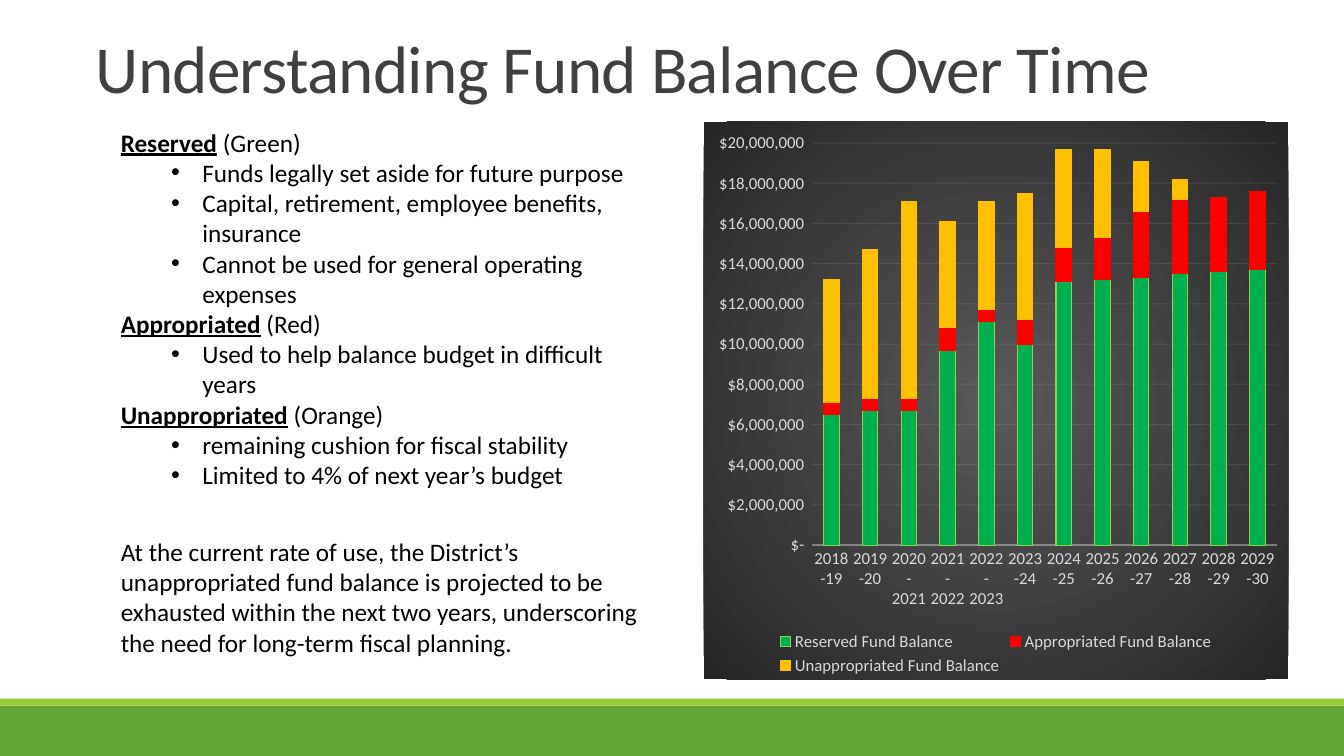
from dataclasses import dataclass
from typing import Any

from lxml import etree
from pptx import Presentation
from pptx.chart.data import CategoryChartData
from pptx.dml.color import RGBColor
from pptx.enum.chart import XL_CHART_TYPE, XL_LEGEND_POSITION, XL_TICK_MARK
from pptx.enum.shapes import MSO_SHAPE
from pptx.enum.text import MSO_ANCHOR
from pptx.oxml import parse_xml
from pptx.oxml.ns import nsdecls, qn
from pptx.util import Inches, Pt

RECTANGLE = MSO_SHAPE.RECTANGLE
STACKED = XL_CHART_TYPE.COLUMN_STACKED
LEGEND_BOTTOM = XL_LEGEND_POSITION.BOTTOM
NO_TICK = XL_TICK_MARK.NONE
TOP, BOTTOM = MSO_ANCHOR.TOP, MSO_ANCHOR.BOTTOM
DOLLARS = '_("$"* #,##0_);_("$"* \\(#,##0\\);_("$"* "-"_);_(@_)'
SLIDE_WIDTH, SLIDE_HEIGHT = Inches(13.33), Inches(7.5)


@dataclass(frozen=True)
class Theme:
    font: str = "Calibri"
    title_size: float = 48
    body_size: float = 18
    chart_size: float = 12
    title: str = "404040"
    body: str = "000000"
    band: str = "63A537"
    stripe: str = "99CB38"
    chart_text: str = "D9D9D9"
    chart_line: str = "F2F2F2"
    chart_center: str = "595959"
    chart_edge: str = "262626"


@dataclass(frozen=True)
class Area:
    """Left, top, width and height in percent of the slide."""
    left: float
    top: float
    width: float
    height: float

    def box(self) -> tuple[int, int, int, int]:
        return (int(SLIDE_WIDTH * self.left / 100), int(SLIDE_HEIGHT * self.top / 100),
                int(SLIDE_WIDTH * self.width / 100), int(SLIDE_HEIGHT * self.height / 100))


@dataclass(frozen=True)
class Band:
    area: Area
    color: str


@dataclass(frozen=True)
class Fund:
    name: str
    color_name: str
    points: tuple[str, ...]


@dataclass(frozen=True)
class Series:
    name: str
    fill: str
    line: str
    hundred_thousands: tuple[int, ...]


THEME = Theme()
BANDS = (
    Band(Area(0, 93.33, 100, 6.67), THEME.band),
    Band(Area(0, 92.4, 100, 0.93), THEME.stripe),
)
TITLE_AREA = Area(6.38, 0, 82.5, 14.8)
FUNDS_AREA = Area(8.25, 16.13, 41.1, 49.87)
OUTLOOK_AREA = Area(8.25, 70.27, 42.69, 17.47)
CHART_AREA = Area(52.36, 16.13, 43.51, 73.73)

TITLE = "Understanding Fund Balance Over Time"
OUTLOOK = ("At the current rate of use, the District’s unappropriated fund balance is projected "
           "to be exhausted within the next two years, underscoring the need for long-term "
           "fiscal planning.")
FUNDS = (
    Fund("Reserved", "Green", (
        "Funds legally set aside for future purpose",
        "Capital, retirement, employee benefits, insurance",
        "Cannot be used for general operating expenses")),
    Fund("Appropriated", "Red", ("Used to help balance budget in difficult years",)),
    Fund("Unappropriated", "Orange", (
        "remaining cushion for fiscal stability",
        "Limited to 4% of next year’s budget")),
)
YEARS = ("2018-19", "2019-20", "2020-2021", "2021-2022", "2022-2023", "2023-24",
         "2024-25", "2025-26", "2026-27", "2027-28", "2028-29", "2029-30")
SERIES = (
    Series("Reserved Fund Balance", "00B050", "92D050",
           (65, 67, 67, 97, 111, 100, 131, 132, 133, 135, 136, 137)),
    Series("Appropriated Fund Balance", "FF0000", "FF0000",
           (6, 6, 6, 11, 6, 12, 17, 21, 33, 37, 37, 39)),
    Series("Unappropriated Fund Balance", "FFC000", "FFC000",
           (61, 74, 98, 53, 54, 63, 49, 44, 25, 10, 0, 0)),
)


def apply(target: Any, values: dict[str, Any]) -> None:
    for name, value in values.items():
        setattr(target, name, value)


def style_font(font: Any, size: float, color: str) -> None:
    apply(font, {"name": THEME.font, "size": Pt(size)})
    font.color.rgb = RGBColor.from_string(color)


def style_line(line: Any, color: str, width: float) -> None:
    line.color.rgb = RGBColor.from_string(color)
    line.width = Pt(width)


def draw_band(slide: Any, band: Band) -> None:
    shape = slide.shapes.add_shape(RECTANGLE, *band.area.box())
    shape.shadow.inherit = False
    shape.fill.solid()
    shape.fill.fore_color.rgb = RGBColor.from_string(band.color)
    shape.line.fill.background()


def add_text_frame(slide: Any, area: Area, anchor: Any = TOP) -> Any:
    frame = slide.shapes.add_textbox(*area.box()).text_frame
    apply(frame, {"word_wrap": True, "vertical_anchor": anchor})
    return frame


def add_run(paragraph: Any, text: str, size: float, color: str, emphasis: bool = False) -> Any:
    run = paragraph.add_run()
    run.text = text
    style_font(run.font, size, color)
    apply(run.font, {"bold": emphasis, "underline": emphasis})
    return run


def draw_title(slide: Any) -> None:
    paragraph = add_text_frame(slide, TITLE_AREA, BOTTOM).paragraphs[0]
    paragraph.line_spacing = 0.85
    run = add_run(paragraph, TITLE, THEME.title_size, THEME.title)
    run.font._element.set("spc", "-50")


def make_bullet(paragraph: Any) -> None:
    properties = paragraph._p.get_or_add_pPr()
    for name, value in {"lvl": 1, "marL": Inches(0.81), "indent": Inches(-0.31)}.items():
        properties.set(name, str(value))
    etree.SubElement(properties, qn("a:buFont"), typeface="Arial")
    etree.SubElement(properties, qn("a:buChar"), char="•")


def draw_funds(slide: Any) -> None:
    frame = add_text_frame(slide, FUNDS_AREA)
    for index, fund in enumerate(FUNDS):
        heading = frame.add_paragraph() if index else frame.paragraphs[0]
        add_run(heading, fund.name, THEME.body_size, THEME.body, True)
        add_run(heading, f" ({fund.color_name})", THEME.body_size, THEME.body)
        for point in fund.points:
            paragraph = frame.add_paragraph()
            make_bullet(paragraph)
            add_run(paragraph, point, THEME.body_size, THEME.body)


def shade_chart(chart: Any) -> None:
    chart.element.find(qn("c:chart")).addnext(parse_xml(
        f'<c:spPr {nsdecls("c", "a")}><a:gradFill><a:gsLst>'
        f'<a:gs pos="0"><a:srgbClr val="{THEME.chart_center}"/></a:gs>'
        f'<a:gs pos="100000"><a:srgbClr val="{THEME.chart_edge}"/></a:gs></a:gsLst>'
        '<a:path path="circle"><a:fillToRect l="50000" t="50000" r="50000" b="50000"/></a:path>'
        '</a:gradFill><a:ln><a:noFill/></a:ln></c:spPr>'))
    for query, opacity in {"//c:majorGridlines//a:srgbClr": 10,
                           "//c:catAx/c:spPr//a:srgbClr": 54}.items():
        for color in chart.element.xpath(query):
            etree.SubElement(color, qn("a:alpha"), val=str(opacity * 1000))
    for body in chart.element.xpath("//c:catAx/c:txPr/a:bodyPr"):
        body.set("rot", "0")


def draw_chart(slide: Any) -> None:
    data = CategoryChartData(number_format=DOLLARS)
    data.categories = YEARS
    for series in SERIES:
        data.add_series(series.name, [value * 100000 for value in series.hundred_thousands])
    chart = slide.shapes.add_chart(STACKED, *CHART_AREA.box(), data).chart
    apply(chart, {"has_title": False, "has_legend": True})
    apply(chart.legend, {"position": LEGEND_BOTTOM, "include_in_layout": False})
    plot = chart.plots[0]
    apply(plot, {"gap_width": 150, "overlap": 100, "vary_by_categories": False})
    for drawn, series in zip(plot.series, SERIES):
        drawn.format.fill.solid()
        drawn.format.fill.fore_color.rgb = RGBColor.from_string(series.fill)
        style_line(drawn.format.line, series.line, 0.75)
    years, amounts = chart.category_axis, chart.value_axis
    for axis in (years, amounts):
        apply(axis, {"major_tick_mark": NO_TICK, "minor_tick_mark": NO_TICK})
    for part in (chart, chart.legend):
        style_font(part.font, THEME.chart_size, THEME.chart_text)
    for axis in (years, amounts):
        style_font(axis.tick_labels.font, THEME.chart_size, THEME.chart_text)
    apply(amounts, {"minimum_scale": 0, "maximum_scale": 20000000, "major_unit": 2000000})
    apply(amounts.tick_labels, {"number_format": DOLLARS, "number_format_is_linked": False})
    amounts.format.line.fill.background()
    style_line(amounts.major_gridlines.format.line, THEME.chart_line, 0.75)
    style_line(years.format.line, THEME.chart_line, 1)
    shade_chart(chart)


def main() -> None:
    presentation = Presentation()
    apply(presentation, {"slide_width": SLIDE_WIDTH, "slide_height": SLIDE_HEIGHT})
    slide = presentation.slides.add_slide(presentation.slide_layouts[6])
    for band in BANDS:
        draw_band(slide, band)
    draw_title(slide)
    draw_chart(slide)
    draw_funds(slide)
    outlook = add_text_frame(slide, OUTLOOK_AREA).paragraphs[0]
    add_run(outlook, OUTLOOK, THEME.body_size, THEME.body)
    presentation.save("out.pptx")


if __name__ == "__main__":
    main()
